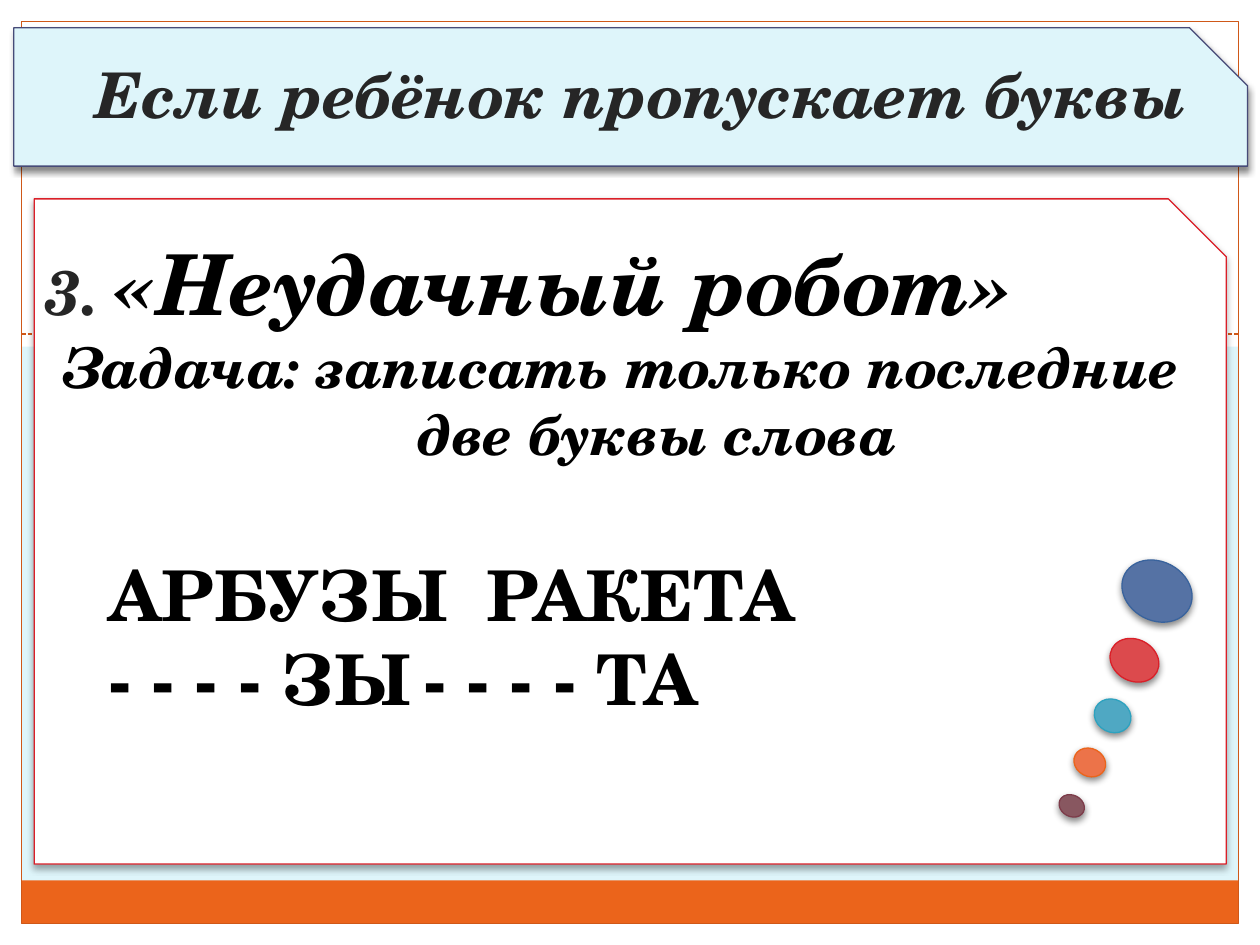
from lxml.etree import SubElement as Sub
from pptx import Presentation
from pptx.dml.color import RGBColor
from pptx.enum.dml import MSO_LINE as Dash
from pptx.enum.shapes import MSO_CONNECTOR as Link, MSO_SHAPE as Kind
from pptx.enum.text import MSO_ANCHOR as Anchor, MSO_AUTO_SIZE as Auto, PP_ALIGN as Align
from pptx.oxml.ns import qn
from pptx.util import Cm, Pt

WIDE, HIGH, EDGE = 25.4, 19.05, 0.43
WHITE, PALE, BLACK, GREY = "FFFFFF", "DEF5FA", "000000", "262626"
RUST, FLAME, RED = "CF5818", "EB641B", "DA1F28"
HANG = 1.42


def tint(code):
    return RGBColor.from_string(code)


def write(para, text, size=40, color=BLACK, slant=True, font="TeX Gyre Schola"):
    run = para.add_run()
    run.text = text
    face = run.font
    face.name, face.size = font, Pt(size)
    face.bold, face.italic = True, slant
    face.color.rgb = tint(color)


def indent(para, left, first, stops=()):
    props = para._p.get_or_add_pPr()
    props.set("marL", str(Cm(left)))
    props.set("indent", str(Cm(first)))
    if stops:
        tabs = Sub(props, qn("a:tabLst"))
        for stop in stops:
            Sub(tabs, qn("a:tab"), pos=str(Cm(stop)), algn="l")


class Deck:
    def __init__(self):
        self.show = Presentation()
        self.show.slide_width, self.show.slide_height = Cm(WIDE), Cm(HIGH)
        self.slide = self.show.slides.add_slide(self.show.slide_layouts[5])
        self.slide.background.fill.solid()
        self.slide.background.fill.fore_color.rgb = tint(PALE)

    def shape(self, box, kind=Kind.RECTANGLE, fill=None, line=None,
              shade=0, snip=None, turn=0, home=None):
        item = (home or self.slide).shapes.add_shape(kind, *map(Cm, box))
        item.rotation = turn
        if snip is not None:
            item.adjustments[0] = snip
        if fill:
            item.fill.solid()
            item.fill.fore_color.rgb = tint(fill)
        else:
            item.fill.background()
        if line:
            item.line.color.rgb = tint(line)
            item.line.width = Pt(0.75)
        else:
            item.line.fill.background()
        item.shadow.inherit = False
        if shade:
            effect = item._element.spPr.find(qn("a:effectLst"))
            cast = Sub(effect, qn("a:outerShdw"), blurRad=str(Pt(4)), dist=str(Pt(2)),
                       dir="5400000", algn="ctr", rotWithShape="0")
            color = Sub(cast, qn("a:srgbClr"), val=BLACK)
            Sub(color, qn("a:alpha"), val=str(shade * 1000))

    def rule(self, left, right, top, color):
        line = self.slide.shapes.add_connector(
            Link.STRAIGHT, Cm(left), Cm(top), Cm(right), Cm(top))
        line.line.color.rgb = tint(color)
        line.line.width = Pt(0.9)
        line.line.dash_style = Dash.SQUARE_DOT
        Sub(line._element.spPr, qn("a:effectLst"))

    def title(self, box, text):
        item = self.slide.shapes.title
        item.left, item.top, item.width, item.height = map(Cm, box)
        self.slide.shapes._spTree.append(item._element)  # bring to front
        frame = item.text_frame
        frame.auto_size, frame.vertical_anchor = Auto.NONE, Anchor.MIDDLE
        frame.paragraphs[0].alignment = Align.CENTER
        write(frame.paragraphs[0], text, size=36, color=GREY)

    def text(self, box):
        frame = self.slide.shapes.add_textbox(*map(Cm, box)).text_frame
        frame.word_wrap = True
        return frame

    def save(self):
        self.show.save("out.pptx")


def main():
    deck = Deck()

    # Backdrop: white margins, orange band, dashed rule and frame
    for box in ((0, HIGH - EDGE, WIDE, EDGE), (WIDE - EDGE, 0, EDGE, HIGH),
                (0, 0, EDGE, HIGH), (0, 0, WIDE, 6.99)):
        deck.shape(box, fill=WHITE)
    inner = WIDE - 2 * EDGE
    deck.shape((EDGE, 17.75, inner, 0.86), fill=FLAME)
    deck.rule(EDGE, WIDE - EDGE, 6.73, RUST)
    deck.shape((EDGE, EDGE, inner, HIGH - 2 * EDGE), line=RUST)

    # Panel and banner with a cut corner
    deck.shape((0.69, 4.01, 24.03, 13.41), Kind.SNIP_1_RECTANGLE,
               WHITE, RED, shade=35, snip=0.087)
    deck.shape((0.28, 0.56, 24.87, 2.79), Kind.SNIP_1_RECTANGLE,
               PALE, "474B78", shade=45, snip=0.42)
    deck.title((0.28, 0.99, 25.32, 1.8), "Если ребёнок пропускает буквы")

    # Task
    frame = deck.text((0.66, 4.55, 23.75, 10.2))
    head = frame.paragraphs[0]
    indent(head, HANG, -HANG)
    write(head, "3. ", size=36, color=GREY)
    write(head, "«Неудачный робот»", size=48)
    task = frame.add_paragraph()
    task.alignment = Align.CENTER
    indent(task, HANG, -HANG)
    write(task, "Задача: записать только последние две буквы слова", size=32)

    # Words in two columns
    for words, stops, gap in ((("АРБУЗЫ", "РАКЕТА"), (HANG, 11.61), 48),
                              (("- - - - ЗЫ", "- - - - ТА"), (1.83, 12.4), 0)):
        row = frame.add_paragraph()
        row.space_before = Pt(gap)
        indent(row, 0, 0, stops)
        write(row, "".join("\t" + word for word in words), slant=False)

    # Trail of dots
    trail = deck.slide.shapes.add_group_shape()
    for box, fill, line in (
            ((22.73, 11.18, 1.19, 1.47), "5572A4", "39639D"),
            ((22.45, 12.8, 0.84, 1.02), "DC4A4D", RED),
            ((22.1, 14.05, 0.66, 0.76), "4FA8C3", "2DA2BF"),
            ((21.69, 15.04, 0.56, 0.66), "EC7349", FLAME),
            ((21.39, 15.98, 0.43, 0.53), "885760", "7D3C4A")):
        deck.shape(box, Kind.FLOWCHART_CONNECTOR, fill, line,
                   shade=45, turn=297.6, home=trail)

    deck.save()


if __name__ == "__main__":
    main()
